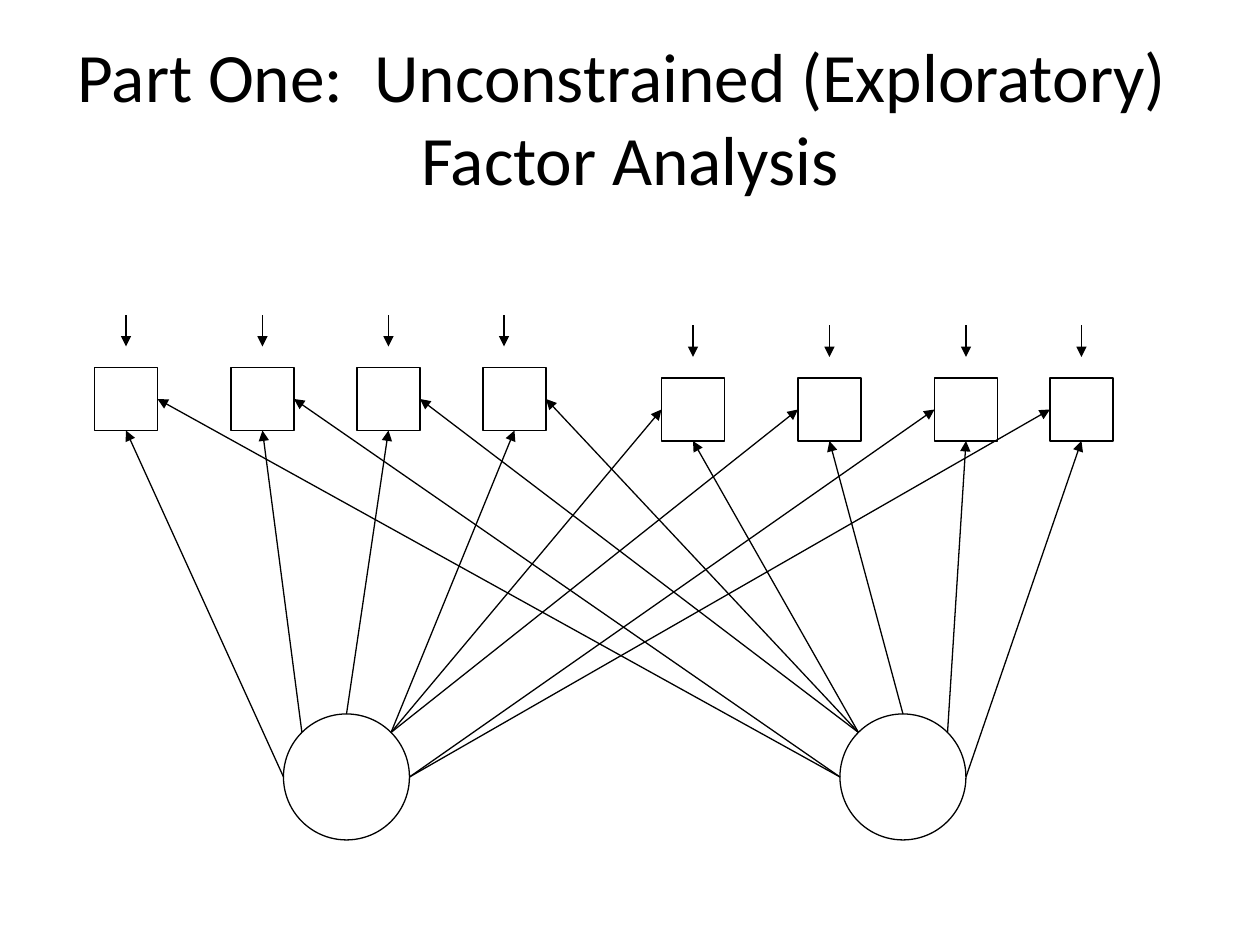
from math import sqrt
from lxml.etree import SubElement
from pptx import Presentation
from pptx.dml.color import RGBColor
from pptx.enum.shapes import MSO_CONNECTOR, MSO_SHAPE
from pptx.enum.text import MSO_ANCHOR, PP_ALIGN
from pptx.oxml.ns import qn
from pptx.util import Inches, Pt

CELL = Inches(1) / 12  # the slide is a grid of 120 columns by 90 rows
SQUARE, CIRCLE = 6, 12
NOISE_LENGTH, NOISE_RISE = 3, 5
INK = "000000"

# Each group: left edges of its squares, columns of its noise arrows, top row
GROUPS = [
    {"squares": [9, 22, 34, 46], "noise": [12, 25, 37, 48], "top": 35},
    {"squares": [63, 76, 89, 100], "noise": [66, 79, 92, 103], "top": 36},
]
# Each factor: its left edge and the rim point its path to each square leaves
FACTOR_TOP = 68
FACTORS = [
    (27, ["left", "top left", "top", "top right",
          "top right", "top right", "right", "right"]),
    (80, ["left", "left", "top left", "top left",
          "top left", "top", "top right", "right"]),
]
DIAGONAL = sqrt(0.5)
RIM = {"left": (-1, 0), "top left": (-DIAGONAL, -DIAGONAL), "top": (0, -1),
       "top right": (DIAGONAL, -DIAGONAL), "right": (1, 0)}


def color(value):
    return RGBColor.from_string(value)


def grid(*cells):
    return [round(cell * CELL) for cell in cells]


def set_line(line):
    line.color.rgb = color(INK)
    line.width = Pt(0.75)


def add_node(slide, kind, left, top, size):
    shape = slide.shapes.add_shape(kind, *grid(left, top, size, size))
    shape.shadow.inherit = False
    shape.fill.background()
    set_line(shape.line)


def add_arrow(slide, start, end):
    connector = slide.shapes.add_connector(
        MSO_CONNECTOR.STRAIGHT, *grid(*start, *end))
    set_line(connector.line)
    properties = connector.element.spPr
    SubElement(properties.find(qn("a:ln")), qn("a:tailEnd"), type="triangle")
    SubElement(properties, qn("a:effectLst"))


def add_title(slide, box, text):
    frame = slide.shapes.add_textbox(*grid(*box)).text_frame
    frame.word_wrap = True
    frame.vertical_anchor = MSO_ANCHOR.MIDDLE
    paragraph = frame.paragraphs[0]
    paragraph.alignment = PP_ALIGN.CENTER
    run = paragraph.add_run()
    run.text = text
    run.font.color.rgb = color(INK)
    for name, value in {"name": "Calibri", "size": Pt(39.6)}.items():
        setattr(run.font, name, value)


def add_indicators(slide, squares, noise, top):
    """One group of observed variables, each with a noise arrow above."""
    for left in squares:
        add_node(slide, MSO_SHAPE.RECTANGLE, left, top, SQUARE)
    for column in noise:
        start = top - NOISE_RISE
        add_arrow(slide, (column, start), (column, start + NOISE_LENGTH))


def add_factor(slide, left, top, own_group, rim_points):
    """A factor with a path to the squares of both groups."""
    add_node(slide, MSO_SHAPE.OVAL, left, top, CIRCLE)
    radius = CIRCLE / 2
    targets = [(group, square) for group in GROUPS
               for square in group["squares"]]
    for (group, square), point in zip(targets, rim_points):
        across, down = RIM[point]
        start = (left + radius * (1 + across), top + radius * (1 + down))
        if group is own_group:  # own squares are met from below
            end = (square + SQUARE / 2, group["top"] + SQUARE)
        else:  # the other group's squares are met on the facing side
            side = SQUARE if square < left else 0
            end = (square + side, group["top"] + SQUARE / 2)
        add_arrow(slide, start, end)


def main():
    presentation = Presentation()
    presentation.slide_width, presentation.slide_height = grid(120, 90)
    slide = presentation.slides.add_slide(presentation.slide_layouts[6])

    add_title(slide, (6, 3.6, 108, 15),
              "Part One:  Unconstrained (Exploratory)  Factor Analysis")
    for group in GROUPS:
        add_indicators(slide, **group)
    for group, (left, rim_points) in zip(GROUPS, FACTORS):
        add_factor(slide, left, FACTOR_TOP, group, rim_points)

    presentation.save("out.pptx")


if __name__ == "__main__":
    main()
